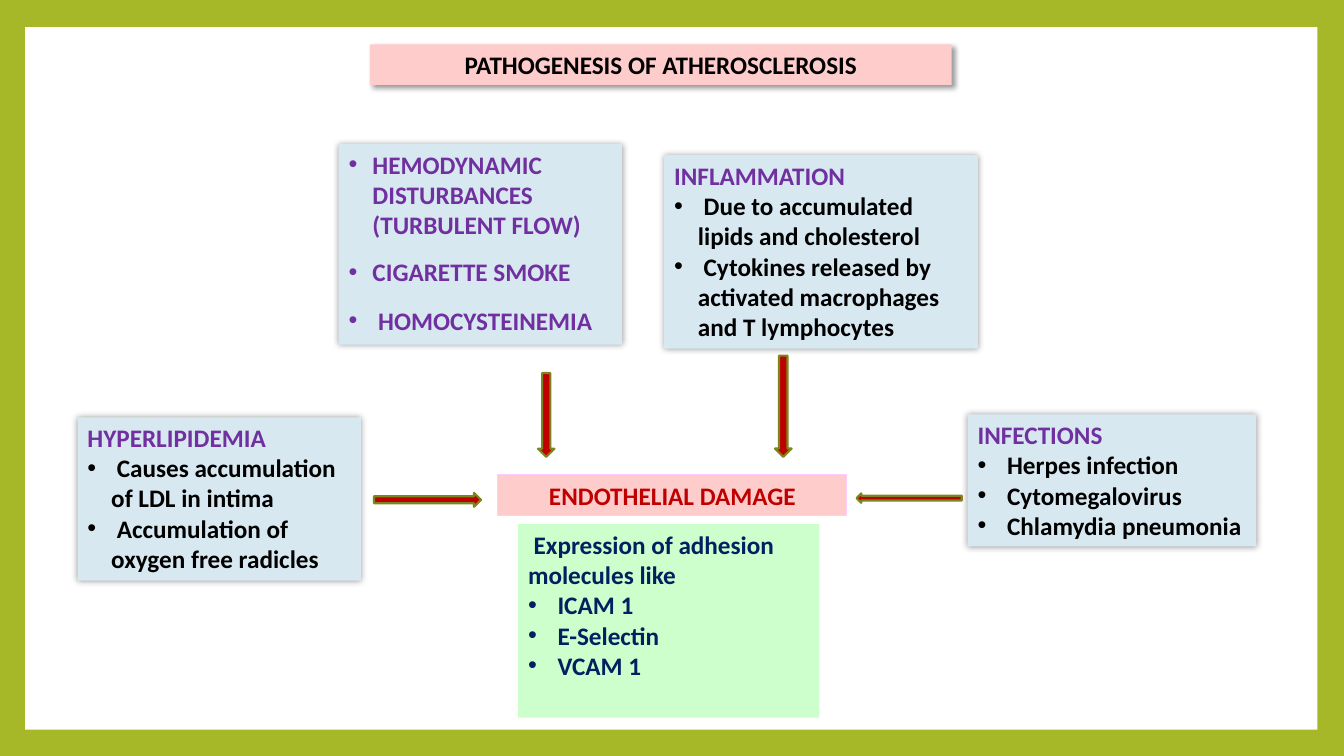
from lxml.etree import SubElement
from pptx import Presentation
from pptx.dml.color import RGBColor
from pptx.enum.shapes import MSO_SHAPE as Preset
from pptx.enum.text import MSO_ANCHOR as Anchor, PP_ALIGN as Align
from pptx.oxml.ns import qn
from pptx.util import Pt

GREEN = RGBColor(0xA6, 0xB7, 0x27)
OLIVE = RGBColor(0x7B, 0x87, 0x1D)
WHITE = RGBColor(0xFF, 0xFF, 0xFF)
BLACK = RGBColor(0x00, 0x00, 0x00)
PINK = RGBColor(0xFF, 0xCC, 0xCC)
LILAC = RGBColor(0xFF, 0xCC, 0xFF)
PALE_BLUE = RGBColor(0xD8, 0xE8, 0xF1)
MINT = RGBColor(0xCC, 0xFF, 0xCC)
PURPLE = RGBColor(0x70, 0x30, 0xA0)
RED = RGBColor(0xC0, 0x00, 0x00)
NAVY = RGBColor(0x00, 0x20, 0x60)

FONT = "Calibri"
TEXT_SIZE = 18
HANGING = 17
TITLE_SHADOW = (4, 3, 45)
GLOW_SHADOW = (5, 0, 0)

PANEL = (18, 19.4, 923, 501.8)
TITLE = ("PATHOGENESIS OF ATHEROSCLEROSIS", (264.3, 31.7, 415.5, 29))
DAMAGE = ("ENDOTHELIAL DAMAGE", (355.7, 339.2, 249.2, 29))

RISKS = (
    (242, 103, 202.5, 143.2),
    (
        ("HEMODYNAMIC DISTURBANCES (TURBULENT FLOW)", 0),
        ("CIGARETTE SMOKE", 12),
        (" HOMOCYSTEINEMIA", 13),
    ),
)

CAUSES = [
    ((474.5, 110.9, 224, 138.2), "INFLAMMATION",
     [" Due to accumulated lipids and cholesterol",
      " Cytokines released by activated macrophages and T lymphocytes"]),
    ((55.4, 298.1, 202.5, 116.6), "HYPERLIPIDEMIA",
     [" Causes accumulation of LDL in intima",
      " Accumulation of oxygen free radicles"]),
    ((691.2, 296, 206, 94.3), "INFECTIONS",
     [" Herpes infection", " Cytomegalovirus", " Chlamydia pneumonia"]),
]

ADHESION = (
    (370.1, 374.4, 215.3, 138.2),
    " Expression of adhesion molecules like",
    [" ICAM 1", " E-Selectin", " VCAM 1"],
)

ARROWS = [
    (Preset.RIGHT_ARROW, (267.1, 352, 76.5, 10)),
    (Preset.DOWN_ARROW, (553.5, 254, 12, 72.4)),
    (Preset.DOWN_ARROW, (384.3, 266.4, 11.8, 60)),
    (Preset.LEFT_ARROW, (611.8, 352.4, 75.2, 6.8)),
]


def add_block(slide, place, fill, preset=Preset.RECTANGLE, line=None, width=0.75, shadow=None):
    shape = slide.shapes.add_shape(preset, *map(Pt, place))
    shape.fill.solid()
    shape.fill.fore_color.rgb = fill
    if line is None:
        shape.line.fill.background()
    else:
        shape.line.color.rgb = line
        shape.line.width = Pt(width)
    shape.shadow.inherit = False
    if shadow:
        blur, distance, angle = shadow
        effects = shape._element.spPr.find(qn("a:effectLst"))
        outer = SubElement(effects, qn("a:outerShdw"), blurRad=str(Pt(blur)),
                           dist=str(Pt(distance)), dir=str(angle * 60000), rotWithShape="0")
        color = SubElement(outer, qn("a:srgbClr"), val=str(BLACK))
        SubElement(color, qn("a:alpha"), val="40000")
    shape.text_frame.word_wrap = True
    shape.text_frame.vertical_anchor = Anchor.TOP
    return shape


def add_text(shape, text, color=BLACK, align=Align.LEFT, bullet=False, before=0):
    frame = shape.text_frame
    paragraph = frame.paragraphs[0]
    if paragraph.runs:
        paragraph = frame.add_paragraph()
    paragraph.alignment = align
    paragraph.space_before = Pt(before)
    if bullet:
        properties = paragraph._p.get_or_add_pPr()
        properties.set("marL", str(Pt(HANGING)))
        properties.set("indent", str(-Pt(HANGING)))
        SubElement(properties, qn("a:buFont"), typeface="Arial")
        SubElement(properties, qn("a:buChar"), char="•")
    run = paragraph.add_run()
    run.text = text
    run.font.name = FONT
    run.font.size = Pt(TEXT_SIZE)
    run.font.bold = True
    run.font.color.rgb = color


def add_list(shape, heading, items, heading_color, item_color):
    add_text(shape, heading, color=heading_color)
    for item in items:
        add_text(shape, item, color=item_color, bullet=True)


def main():
    presentation = Presentation()
    presentation.slide_width, presentation.slide_height = Pt(960), Pt(540)
    slide = presentation.slides.add_slide(presentation.slide_layouts[6])
    slide.background.fill.solid()
    slide.background.fill.fore_color.rgb = GREEN
    add_block(slide, PANEL, WHITE)

    text, place = TITLE
    add_text(add_block(slide, place, PINK, shadow=TITLE_SHADOW), text, align=Align.CENTER)

    place, risks = RISKS
    risk_box = add_block(slide, place, PALE_BLUE, shadow=GLOW_SHADOW)
    for risk, before in risks:
        add_text(risk_box, risk, color=PURPLE, bullet=True, before=before)

    for place, heading, items in CAUSES:
        cause_box = add_block(slide, place, PALE_BLUE, shadow=GLOW_SHADOW)
        add_list(cause_box, heading, items, PURPLE, BLACK)

    text, place = DAMAGE
    add_text(add_block(slide, place, PINK, line=LILAC), text, color=RED, align=Align.CENTER)

    place, heading, items = ADHESION
    add_list(add_block(slide, place, MINT), heading, items, NAVY, NAVY)

    for preset, place in ARROWS:
        add_block(slide, place, RED, preset=preset, line=OLIVE, width=1.5)

    presentation.save("out.pptx")


if __name__ == "__main__":
    main()
